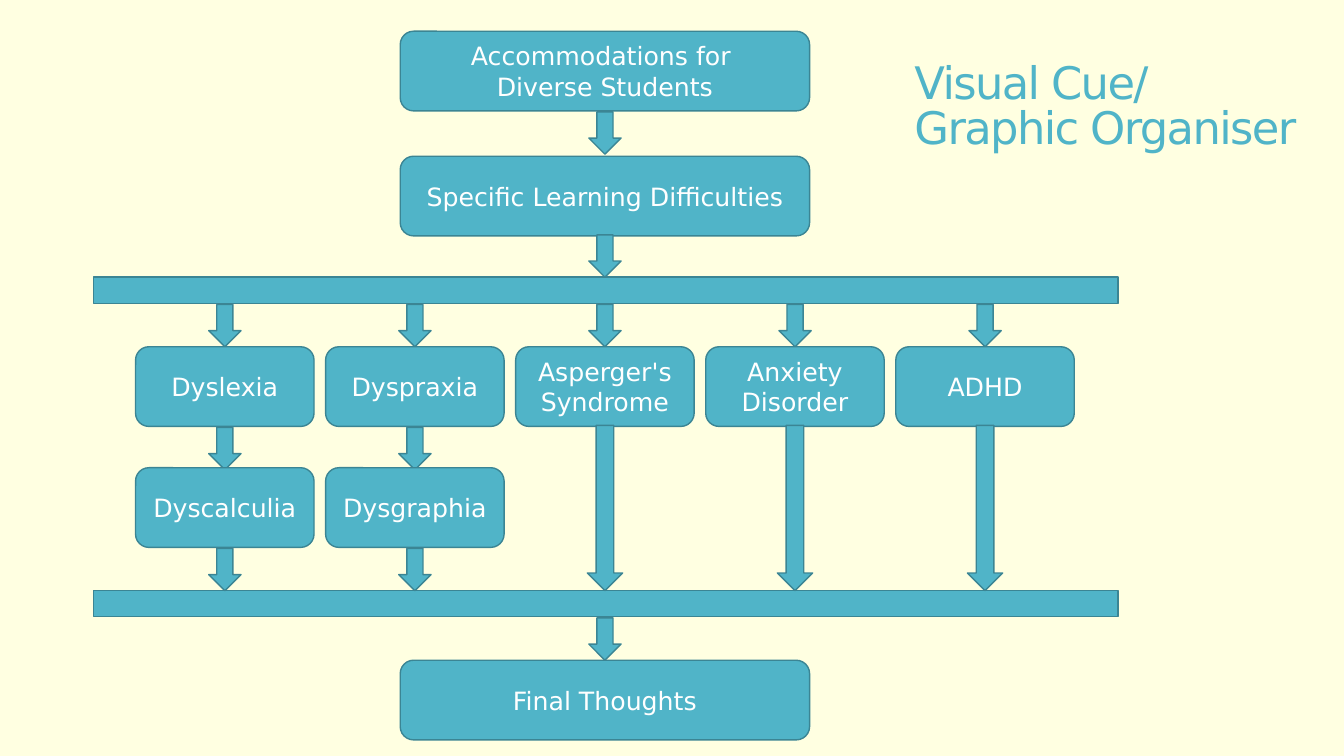
from pptx import Presentation
from pptx.dml.color import RGBColor
from pptx.enum.shapes import MSO_SHAPE
from pptx.enum.text import MSO_ANCHOR, MSO_AUTO_SIZE, PP_ALIGN
from pptx.util import Inches, Pt

TITLE = "Visual Cue/ Graphic Organiser"
# Wide boxes on the centre line: text, top
STAGES = [
    ("Accommodations for \vDiverse Students", 0.31),
    ("Specific Learning Difficulties", 1.55),
    ("Final Thoughts", 6.55),
]
# Each column lists its boxes from top to bottom
COLUMNS = [
    ["Dyslexia", "Dyscalculia"],
    ["Dyspraxia", "Dysgraphia"],
    ["Asperger's Syndrome"],
    ["Anxiety\nDisorder"],
    ["ADHD"],
]
BAR_TOPS = [2.75, 5.86]
STAGE_ARROW_TOPS = [1.11, 2.33, 6.13]

FONT = "DejaVu Sans"
BACKGROUND, TEAL, DARK_TEAL, WHITE = "FFFFE1", "50B4C8", "3B8594", "FFFFFF"

CENTER = 6.0
STAGE_WIDTH, BOX_WIDTH, BOX_HEIGHT = 4.06, 1.77, 0.79
BAR_LEFT, BAR_WIDTH, BAR_HEIGHT = 0.93, 10.16, 0.26
ARROW_WIDTH, ARROW_HEIGHT = 0.32, 0.42
LONG_ARROW_WIDTH, LONG_ARROW_HEIGHT = 0.35, 1.64
FIRST_COLUMN, LAST_COLUMN = 2.23, 9.77
COLUMN_STEP = (LAST_COLUMN - FIRST_COLUMN) / (len(COLUMNS) - 1)
ROW_TOP, ROW_STEP = 3.44, 1.2


def color(hex_string):
    return RGBColor.from_string(hex_string)


def style_font(font, size, hex_string):
    font.name = FONT
    font.size = Pt(size)
    font.color.rgb = color(hex_string)


def add_part(slide, kind, center, top, width, height, text=""):
    """Add a teal shape centred horizontally on center."""
    shape = slide.shapes.add_shape(
        kind, Inches(center - width / 2), Inches(top), Inches(width), Inches(height))
    shape.shadow.inherit = False
    shape.fill.solid()
    shape.fill.fore_color.rgb = color(TEAL)
    shape.line.color.rgb = color(DARK_TEAL)
    shape.line.width = Pt(1)
    if text:
        frame = shape.text_frame
        frame.text = text
        frame.word_wrap = True
        frame.vertical_anchor = MSO_ANCHOR.MIDDLE
        for paragraph in frame.paragraphs:
            paragraph.alignment = PP_ALIGN.CENTER
            style_font(paragraph.font, 18, WHITE)


def add_box(slide, center, top, width, text):
    add_part(slide, MSO_SHAPE.ROUNDED_RECTANGLE, center, top, width, BOX_HEIGHT, text)


def add_arrow(slide, center, top, width=ARROW_WIDTH, height=ARROW_HEIGHT):
    add_part(slide, MSO_SHAPE.DOWN_ARROW, center, top, width, height)


def add_title(slide):
    title = slide.shapes.title
    title.left, title.top = Inches(8.97), Inches(0.37)
    title.width, title.height = Inches(4.15), Inches(1.41)
    frame = title.text_frame
    frame.text = TITLE
    frame.word_wrap = True
    frame.auto_size = MSO_AUTO_SIZE.NONE
    frame.vertical_anchor = MSO_ANCHOR.MIDDLE
    paragraph = frame.paragraphs[0]
    paragraph.alignment = PP_ALIGN.LEFT
    paragraph.line_spacing = 0.85
    style_font(paragraph.font, 32, TEAL)
    paragraph.runs[0]._r.get_or_add_rPr().set("spc", "-120")


def add_column(slide, center, names):
    add_arrow(slide, center, ROW_TOP - ARROW_HEIGHT)
    for row, name in enumerate(names):
        top = ROW_TOP + row * ROW_STEP
        add_box(slide, center, top, BOX_WIDTH, name)
        if len(names) > 1:
            add_arrow(slide, center, top + BOX_HEIGHT + 0.01)
        else:
            add_arrow(slide, center, BAR_TOPS[1] - LONG_ARROW_HEIGHT,
                      LONG_ARROW_WIDTH, LONG_ARROW_HEIGHT)


def main():
    presentation = Presentation()
    presentation.slide_width, presentation.slide_height = Inches(13.33), Inches(7.5)
    slide = presentation.slides.add_slide(presentation.slide_layouts[5])
    slide.background.fill.solid()
    slide.background.fill.fore_color.rgb = color(BACKGROUND)

    add_title(slide)
    for text, top in STAGES:
        add_box(slide, CENTER, top, STAGE_WIDTH, text)
    for top in STAGE_ARROW_TOPS:
        add_arrow(slide, CENTER, top)
    for top in BAR_TOPS:
        add_part(slide, MSO_SHAPE.RECTANGLE, BAR_LEFT + BAR_WIDTH / 2, top,
                 BAR_WIDTH, BAR_HEIGHT)
    for index, names in enumerate(COLUMNS):
        add_column(slide, FIRST_COLUMN + index * COLUMN_STEP, names)

    presentation.save("out.pptx")


if __name__ == "__main__":
    main()
